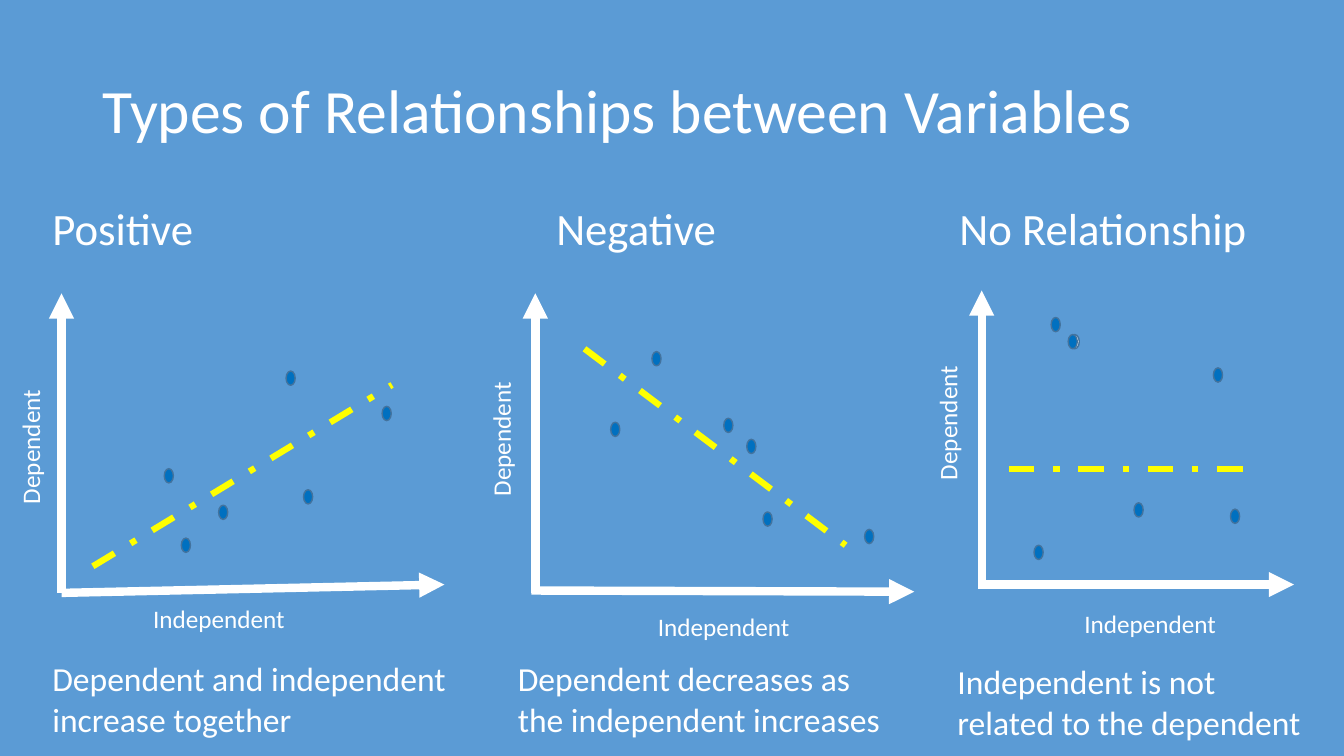
from dataclasses import dataclass
from lxml.etree import SubElement
from pptx import Presentation
from pptx.dml.color import RGBColor as RGB
from pptx.enum.dml import MSO_LINE
from pptx.enum.shapes import MSO_CONNECTOR, MSO_SHAPE
from pptx.enum.text import MSO_ANCHOR, MSO_AUTO_SIZE, PP_ALIGN
from pptx.oxml.ns import qn
from pptx.util import Cm, Pt


@dataclass(frozen=True)
class Theme:
    font: str = "Calibri"
    background: RGB = RGB(0x5B, 0x9B, 0xD5)
    white: RGB = RGB(0xFF, 0xFF, 0xFF)
    trend: RGB = RGB(0xFF, 0xFF, 0x00)
    dot: RGB = RGB(0x00, 0x70, 0xC0)
    dot_edge: RGB = RGB(0x43, 0x73, 0x9E)
    title: int = 44
    heading: int = 32
    caption: int = 24
    label: int = 18
    axis_width: float = 6
    trend_width: float = 4.5


@dataclass(frozen=True)
class Plot:
    x_axis: tuple
    y_axis: tuple
    trend: tuple
    dots: tuple
    x_label: tuple
    y_label: tuple
    caption: str
    caption_box: tuple


PLOTS = (
    Plot((1.55, 14.94, 11.2, 14.73), (1.55, 14.94, 1.55, 7.39),
         (2.34, 14.27, 9.88, 9.7),
         ((7.21, 9.35), (7.65, 12.34), (5.51, 12.73),
          (4.14, 11.81), (9.63, 10.24), (4.57, 13.56)),
         (3.61, 15.09), (-1.37, 10.31),
         "Dependent and independent increase together", (1.07, 16.46, 10.59, 2.31)),
    Plot((13.39, 14.88, 23.04, 14.91), (13.49, 14.94, 13.49, 7.39),
         (14.73, 8.79, 21.31, 13.74),
         ((15.39, 10.64), (18.82, 11.07), (19.23, 12.9),
          (21.79, 13.34), (18.24, 10.54), (16.43, 8.86)),
         (16.33, 15.29), (10.49, 10.11),
         "Dependent decreases as the independent increases", (12.8, 16.46, 9.93, 2.31)),
    Plot((24.74, 14.73, 32.61, 14.73), (24.74, 14.83, 24.74, 7.32),
         (25.43, 11.81, 31.55, 11.81),
         ((26.06, 13.74), (26.49, 8), (26.92, 8.43),
          (28.58, 12.67), (30.58, 9.27), (31.01, 12.83)),
         (27.08, 15.21), (21.74, 9.7),
         "Independent is not related to the dependent", (23.88, 16.54, 9.27, 2.31)),
)


class Deck:
    label_size = (4.27, 1.02)
    dot_size = (0.23, 0.36)

    def __init__(self, theme):
        self.theme = theme
        self.prs = Presentation()
        self.prs.slide_width, self.prs.slide_height = Cm(33.87), Cm(19.05)
        self.s = self.prs.slides.add_slide(self.prs.slide_layouts[5])
        fill = self.s.background.fill
        fill.solid()
        fill.fore_color.rgb = theme.background

    def set_text(self, sp, text, size):
        tf = sp.text_frame
        tf.word_wrap = True
        tf.text = text
        p = tf.paragraphs[0]
        p.alignment = PP_ALIGN.LEFT
        font = p.runs[0].font
        font.name, font.size = self.theme.font, Pt(size)
        font.color.rgb = self.theme.white
        return p

    def title(self, text, box):
        sp = self.s.shapes.title
        sp.left, sp.top, sp.width, sp.height = map(Cm, box)
        self.set_text(sp, text, self.theme.title).line_spacing = 0.9
        sp.text_frame.vertical_anchor = MSO_ANCHOR.MIDDLE

    def headings(self, names, box, stops):
        sp = self.s.shapes.add_textbox(*map(Cm, box))
        p = self.set_text(sp, "\t".join(names), self.theme.heading)
        p.line_spacing, p.space_before = 0.9, Pt(10)
        tabs = SubElement(p._p.get_or_add_pPr(), qn("a:tabLst"))
        for stop in stops:
            SubElement(tabs, qn("a:tab"), pos=str(Cm(stop)), algn="l")

    def text(self, text, box, size, rotation=0):
        sp = self.s.shapes.add_textbox(*map(Cm, box))
        sp.rotation = rotation
        self.set_text(sp, text, size)
        sp.text_frame.auto_size = MSO_AUTO_SIZE.SHAPE_TO_FIT_TEXT

    def line(self, ends, color, width):
        sp = self.s.shapes.add_connector(MSO_CONNECTOR.STRAIGHT, *map(Cm, ends))
        sp.line.color.rgb, sp.line.width = color, Pt(width)
        SubElement(sp._element.spPr, qn("a:effectLst"))
        return sp

    def axis(self, ends):
        sp = self.line(ends, self.theme.white, self.theme.axis_width)
        SubElement(sp._element.spPr.find(qn("a:ln")), qn("a:tailEnd"), type="triangle")

    def trend(self, ends):
        sp = self.line(ends, self.theme.trend, self.theme.trend_width)
        sp.line.dash_style = MSO_LINE.DASH_DOT

    def dot(self, at, color):
        sp = self.s.shapes.add_shape(MSO_SHAPE.OVAL, *map(Cm, at + self.dot_size))
        sp.shadow.inherit = False
        sp.fill.solid()
        sp.fill.fore_color.rgb = color
        sp.line.color.rgb, sp.line.width = self.theme.dot_edge, Pt(1)

    def plot(self, plot):
        self.axis(plot.x_axis)
        self.axis(plot.y_axis)
        self.trend(plot.trend)
        for at in plot.dots:
            self.dot(at, self.theme.dot)
        self.text("Independent", plot.x_label + self.label_size, self.theme.label)
        self.text("Dependent", plot.y_label + self.label_size, self.theme.label, 270)
        self.text(plot.caption, plot.caption_box, self.theme.caption)


def main():
    deck = Deck(Theme())
    deck.title("Types of Relationships between Variables", (2.34, 1.02, 29.21, 3.68))
    deck.headings(("Positive", "Negative", "No Relationship"),
                  (1.07, 5.08, 31.55, 1.73), (12.7, 22.86))
    deck.dot((26.97, 8.43), deck.theme.white)
    for plot in PLOTS:
        deck.plot(plot)
    deck.prs.save("out.pptx")


if __name__ == "__main__":
    main()
